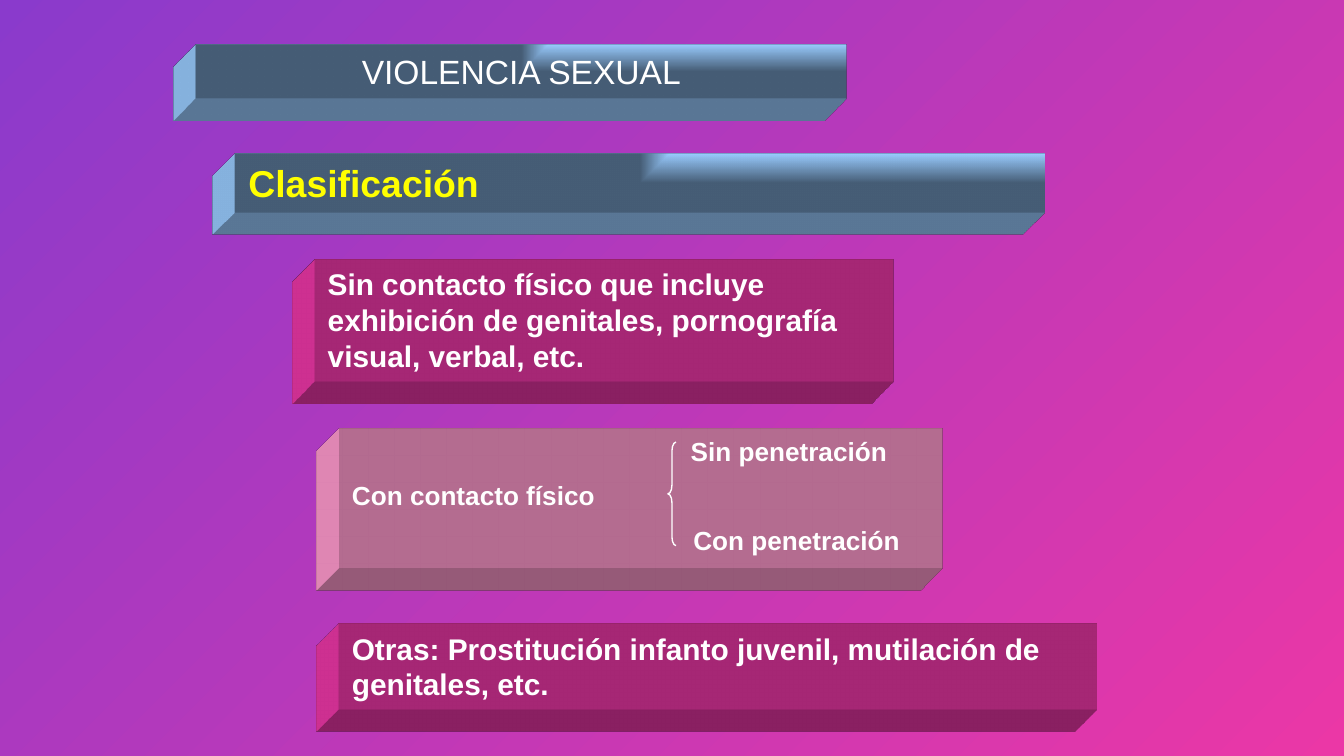
from lxml.etree import SubElement
from pptx import Presentation
from pptx.dml.color import RGBColor
from pptx.enum.shapes import MSO_SHAPE
from pptx.enum.text import MSO_ANCHOR, MSO_AUTO_SIZE, PP_ALIGN
from pptx.oxml import parse_xml
from pptx.oxml.ns import nsdecls, qn
from pptx.util import Inches, Pt

COLORS = {
    "violet": "8A3ACC",
    "magenta": "EB37A6",
    "pink": "FF99CC",
    "sky": "99CCFF",
    "white": "FFFFFF",
    "yellow": "FFFF00",
}


def rgb(name):
    return RGBColor.from_string(COLORS[name])


def write_text(paragraph, text, size=16, color="white", bold=True,
               align=PP_ALIGN.LEFT, indent=0, space_before=0):
    if indent:
        properties = paragraph._p.get_or_add_pPr()
        properties.set("marL", str(Inches(indent)))
        properties.set("indent", "0")
    paragraph.alignment = align
    paragraph.space_before = Pt(space_before)
    run = paragraph.add_run()
    run.text = text
    run.font.name = "Arial"
    run.font.size = Pt(size)
    run.font.bold = bold
    run.font.color.rgb = rgb(color)


class SlideBuilder:
    """Holds the current slide and the style of its elements."""

    def __init__(self, slide):
        self.slide = slide

    def background(self, start, end):
        fill = self.slide.background.fill
        self.gradient(fill, start, end)
        fill.gradient_angle = 315

    def gradient(self, fill, start, end):
        fill.gradient()
        for stop, position, color in zip(fill.gradient_stops, (0, 1), (start, end)):
            stop.position = position
            stop.color.rgb = rgb(color)

    def corner_gradient(self, shape, color):
        """Fill with a gradient that darkens away from the top right corner."""
        self.gradient(shape.fill, color, color)
        properties = shape._element.spPr
        dark_color = properties.findall(".//" + qn("a:srgbClr"))[-1]
        SubElement(dark_color, qn("a:gamma"))
        SubElement(dark_color, qn("a:shade")).set("val", "46275")
        SubElement(dark_color, qn("a:invGamma"))
        linear = properties.find(".//" + qn("a:lin"))
        linear.getparent().replace(linear, parse_xml(
            f'<a:path {nsdecls("a")} path="rect">'
            '<a:fillToRect l="100000" b="100000"/></a:path>'))

    def extrude(self, shape, color):
        """Give the shape depth towards the bottom left."""
        properties = shape._element.spPr
        properties.append(parse_xml(
            f'<a:scene3d {nsdecls("a")}>'
            '<a:camera prst="legacyObliqueBottomLeft"/>'
            '<a:lightRig rig="legacyFlat3" dir="t"/></a:scene3d>'))
        properties.append(parse_xml(
            f'<a:sp3d {nsdecls("a")} extrusionH="430200" prstMaterial="legacyMatte">'
            '<a:bevelT w="13500" h="13500" prst="angle"/>'
            '<a:bevelB w="13500" h="13500" prst="angle"/>'
            f'<a:extrusionClr><a:srgbClr val="{COLORS[color]}"/></a:extrusionClr>'
            '</a:sp3d>'))

    def block(self, left, top, width, height, color, lines, shaded=False):
        """Add an extruded box; lines holds pairs of text and format."""
        shape = self.slide.shapes.add_shape(
            MSO_SHAPE.RECTANGLE, Inches(left), Inches(top), Inches(width), Inches(height))
        if shaded:
            self.corner_gradient(shape, color)
        else:
            shape.fill.solid()
            shape.fill.fore_color.rgb = rgb(color)
        shape.line.fill.background()
        shape.shadow.inherit = False
        self.extrude(shape, color)
        frame = shape.text_frame
        frame.word_wrap = True
        frame.auto_size = MSO_AUTO_SIZE.SHAPE_TO_FIT_TEXT
        frame.vertical_anchor = MSO_ANCHOR.TOP
        for index, (text, text_format) in enumerate(lines):
            paragraph = frame.add_paragraph() if index else frame.paragraphs[0]
            write_text(paragraph, text, space_before=7 if index else 0, **text_format)

    def brace(self, left, top, width, height):
        shape = self.slide.shapes.add_shape(
            MSO_SHAPE.LEFT_BRACE, Inches(left), Inches(top), Inches(width), Inches(height))
        shape.adjustments[0] = 1.09
        shape.adjustments[1] = 0.5
        shape.fill.background()
        shape.line.color.rgb = rgb("white")
        shape.line.width = Pt(0.75)
        shape.shadow.inherit = False


def main():
    presentation = Presentation()
    presentation.slide_width = Inches(10)
    presentation.slide_height = Inches(10) * 9 // 16
    builder = SlideBuilder(presentation.slides.add_slide(presentation.slide_layouts[6]))

    builder.background("violet", "magenta")
    builder.block(1.46, 0.33, 4.84, 0.4, "sky", [
        ("VIOLENCIA SEXUAL", dict(size=18, bold=False, align=PP_ALIGN.CENTER)),
    ], shaded=True)
    builder.block(1.75, 1.14, 6.02, 0.44, "sky", [
        ("Clasificación", dict(size=20, color="yellow")),
    ], shaded=True)
    builder.block(2.34, 1.93, 4.31, 0.91, "magenta", [
        ("Sin contacto físico que incluye exhibición de genitales, "
         "pornografía visual, verbal, etc.", {}),
    ])
    builder.block(2.52, 3.19, 4.49, 1.04, "pink", [
        ("Sin penetración", dict(size=14, indent=2.52)),
        ("Con contacto físico", dict(size=14)),
        ("Con penetración", dict(size=14, indent=2.54)),
    ])
    builder.block(2.52, 4.64, 5.64, 0.64, "magenta", [
        ("Otras: Prostitución infanto juvenil, mutilación de genitales, etc.", {}),
    ])
    builder.brace(4.97, 3.29, 0.06, 0.77)

    presentation.save("out.pptx")


if __name__ == "__main__":
    main()
